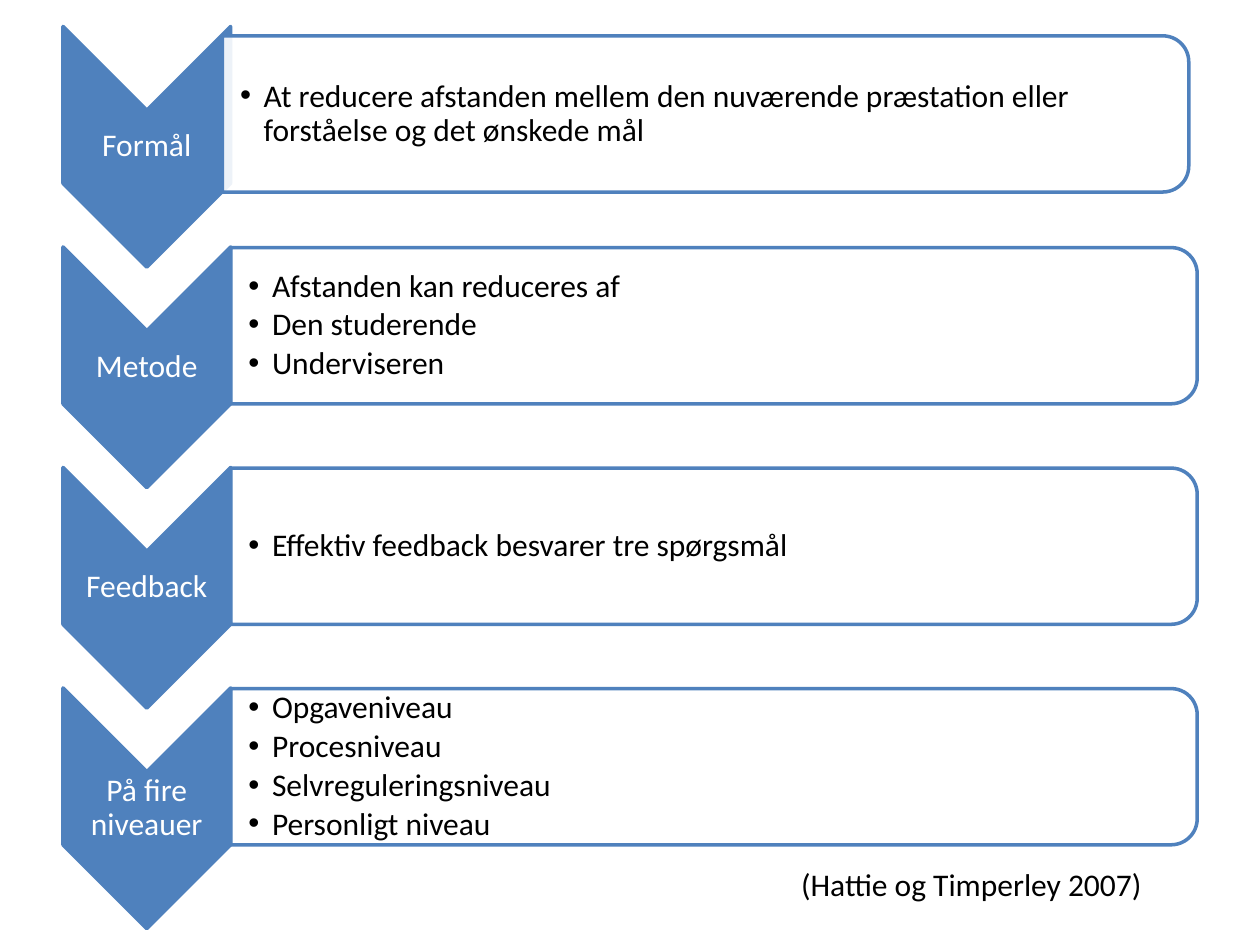
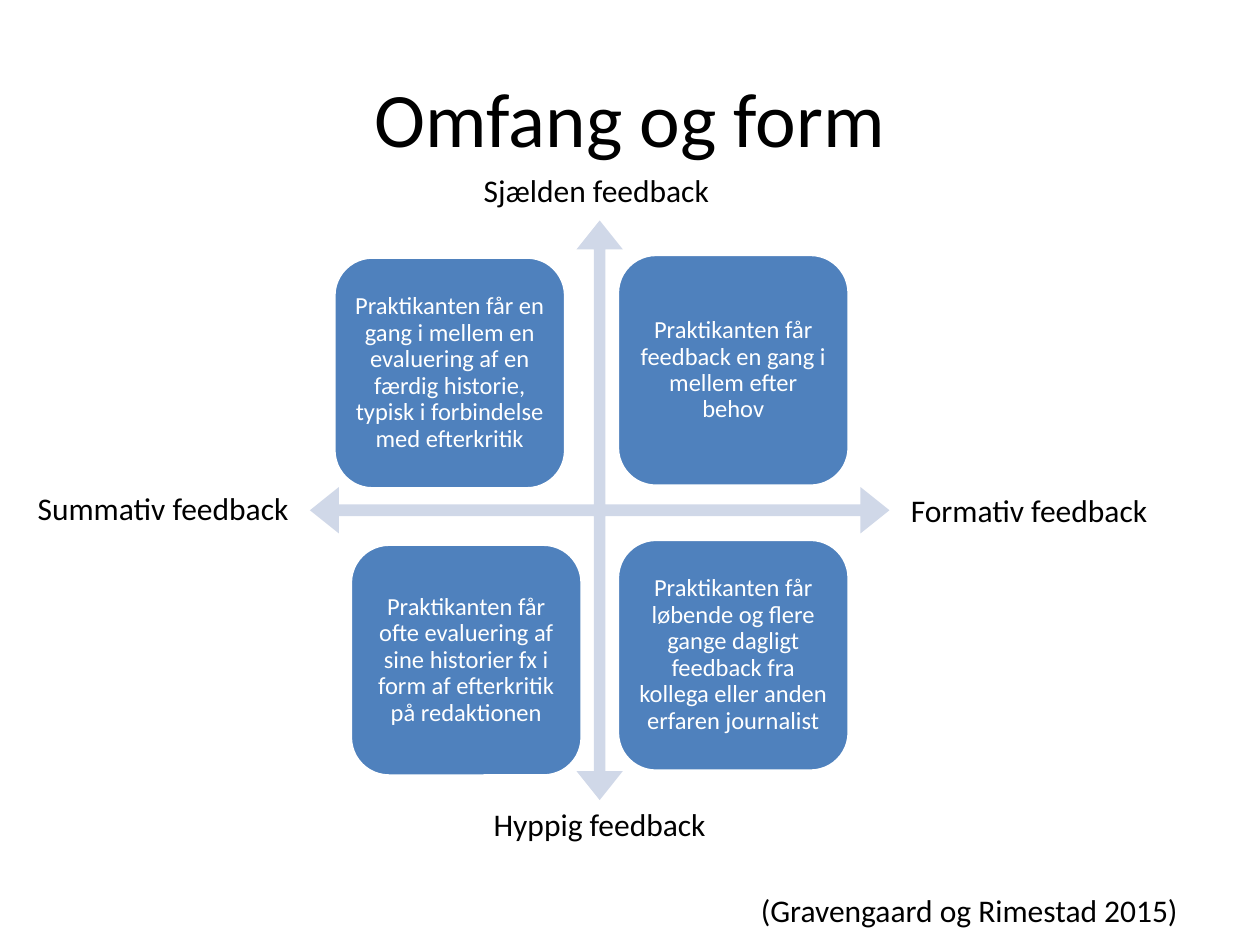
from lxml import etree
from pptx import Presentation
from pptx.dml.color import RGBColor as Rgb
from pptx.enum.shapes import MSO_SHAPE as Shape
from pptx.enum.text import MSO_ANCHOR as Anchor, PP_ALIGN as Align
from pptx.oxml.ns import qn
from pptx.util import Pt

COLORS = {"blue": "4F81BD", "pale": "D0D8E8", "white": "FFFFFF", "black": "000000"}
FONT = "Calibri"

# Text styles: values for the frame, the paragraphs and the spans
TIGHT = {"margin_left": Pt(0.9), "margin_right": Pt(0.9),
         "margin_top": Pt(0.9), "margin_bottom": Pt(0.9)}
INSET = dict.fromkeys(TIGHT, Pt(4.4))
MIDDLE = {"vertical_anchor": Anchor.MIDDLE}
CENTERED = {"alignment": Align.CENTER}
STYLES = {
    "title": (MIDDLE, CENTERED, 44, "black"),
    "caption": ({}, {"alignment": Align.LEFT}, 18, "black"),
    "step": (MIDDLE | TIGHT, CENTERED | {"line_spacing": 0.9}, 18, "white"),
    "bullets": (MIDDLE | TIGHT | {"margin_left": Pt(10.08)},
                {"alignment": Align.LEFT, "line_spacing": 0.9, "space_after": Pt(2.7)},
                18, "black"),
    "quadrant": (MIDDLE | INSET, CENTERED | {"line_spacing": 0.9}, 14, "white"),
}

# Steps: label and bullet lines
STEPS = [
    ("Formål", ["At reducere afstanden mellem den nuværende præstation "
                "eller forståelse og det ønskede mål"]),
    ("Metode", ["Afstanden kan reduceres af", "Den studerende", "Underviseren"]),
    ("Feedback", ["Effektiv feedback besvarer tre spørgsmål"]),
    ("På fire niveauer", ["Opgaveniveau", "Procesniveau",
                          "Selvreguleringsniveau", "Personligt niveau"]),
]
STEP_PITCH = 126
CHEVRON_WIDTH, CHEVRON_HEIGHT = 95.76, 137.5
BAR_WIDTH, BAR_HEIGHT = 552.2, 89.3

# Quadrants: left, top and text
QUADRANT_SIZE = 132.5
QUADRANTS = [
    (200.2, 311, "Praktikanten får ofte evaluering af sine historier fx i "
                 "form af efterkritik på redaktionen"),
    (352.8, 308.2, "Praktikanten får løbende og flere gange dagligt feedback "
                   "fra kollega eller anden erfaren journalist"),
    (190.8, 146.9, "Praktikanten får en gang i mellem en evaluering af en færdig "
                   "historie, typisk i forbindelse med efterkritik"),
    (352.8, 145.4, "Praktikanten får feedback en gang i mellem efter behov"),
]
AXIS_LABELS = [
    (513.4, 277.2, "Formativ feedback"),
    (14.4, 275.8, "Summativ feedback"),
    (275, 456.5, "Hyppig feedback"),
    (269.3, 94.3, "Sjælden feedback"),
]


def set_values(target, values):
    for name, value in values.items():
        setattr(target, name, value)


def color(name):
    return Rgb.from_string(COLORS[name])


def write(box, lines, style):
    frame_values, para_values, size, ink = STYLES[style]
    frame = box.text_frame
    set_values(frame, {"word_wrap": True} | frame_values)
    for index, line in enumerate(lines):
        para = frame.add_paragraph() if index else frame.paragraphs[0]
        set_values(para, para_values)
        span = para.add_run()
        span.text = line
        set_values(span.font, {"name": FONT, "size": Pt(size)})
        span.font.color.rgb = color(ink)
        if style == "bullets":
            add_bullet(para)


def add_bullet(para):
    props = para._p.get_or_add_pPr()
    props.set("marL", str(Pt(13.5)))
    props.set("indent", str(-Pt(13.5)))
    etree.SubElement(props, qn("a:buFont")).set("typeface", "Arial")
    etree.SubElement(props, qn("a:buChar")).set("char", "•")


def add_text(page, left, top, width, height, lines, style):
    box = page.shapes.add_textbox(Pt(left), Pt(top), Pt(width), Pt(height))
    write(box, lines, style)


def add_filled(page, kind, left, top, width, height, fill, line=None):
    shape = page.shapes.add_shape(kind, Pt(left), Pt(top), Pt(width), Pt(height))
    shape.shadow.inherit = False
    shape.fill.solid()
    shape.fill.fore_color.rgb = color(fill)
    if line:
        shape.line.color.rgb = color(line)
        shape.line.width = Pt(2)
    else:
        shape.line.fill.background()
    return shape


def add_turned(page, kind, left, top, width, height, fill):
    """Add a shape turned 90 degrees that covers the given visible area."""
    shift = (width - height) / 2
    shape = add_filled(page, kind, left + shift, top - shift, height, width, fill, "blue")
    shape.rotation = 90
    return shape


def set_opacity(shape, percent):
    tint = shape.fill._xPr.find(qn("a:solidFill"))[0]
    etree.SubElement(tint, qn("a:alpha")).set("val", str(percent * 1000))


def add_step(page, top, label, lines, bar_left, bar_top):
    add_turned(page, Shape.CHEVRON, 36, top, CHEVRON_WIDTH, CHEVRON_HEIGHT, "blue")
    add_text(page, 36, top + 48.2, CHEVRON_WIDTH, 41, [label], "step")
    bar = add_turned(page, Shape.ROUND_2_SAME_RECTANGLE, bar_left, bar_top,
                     BAR_WIDTH, BAR_HEIGHT, "white")
    set_opacity(bar, 90)
    add_text(page, bar_left, bar_top + 4.3, 548, 80.6, lines, "bullets")


def build_steps(page):
    for index, (label, lines) in enumerate(STEPS):
        top = 15.1 + index * STEP_PITCH
        # The first bar sits a little to the left and lower
        shift_x, shift_y = (0, 0) if index else (-4.8, 5)
        add_step(page, top, label, lines, 131.9 + shift_x, top + 0.4 + shift_y)
    add_text(page, 450.7, 491, 211, 29, ["(Hattie og Timperley 2007)"], "caption")


def build_matrix(page):
    add_text(page, 36, 21.6, 648, 90, ["Omfang og form"], "title")
    # Axes
    axes = add_filled(page, Shape.QUAD_ARROW, 177.1, 126, 331.2, 331.2, "pale")
    for index, ratio in enumerate((0.02, 0.04, 0.05)):
        axes.adjustments[index] = ratio
    # Quadrants
    for left, top, text in QUADRANTS:
        box = add_filled(page, Shape.ROUNDED_RECTANGLE, left, top,
                         QUADRANT_SIZE, QUADRANT_SIZE, "blue", "white")
        write(box, [text], "quadrant")
    # Axis labels and reference
    for left, top, text in AXIS_LABELS:
        add_text(page, left, top, 170, 29, [text], "caption")
    add_text(page, 427.7, 505.4, 262, 29, ["(Gravengaard og Rimestad 2015)"], "caption")


def main():
    deck = Presentation()
    set_values(deck, {"slide_width": Pt(720), "slide_height": Pt(540)})
    for build in (build_steps, build_matrix):
        build(deck.slides.add_slide(deck.slide_layouts[6]))
    deck.save("out.pptx")


if __name__ == "__main__":
    main()
